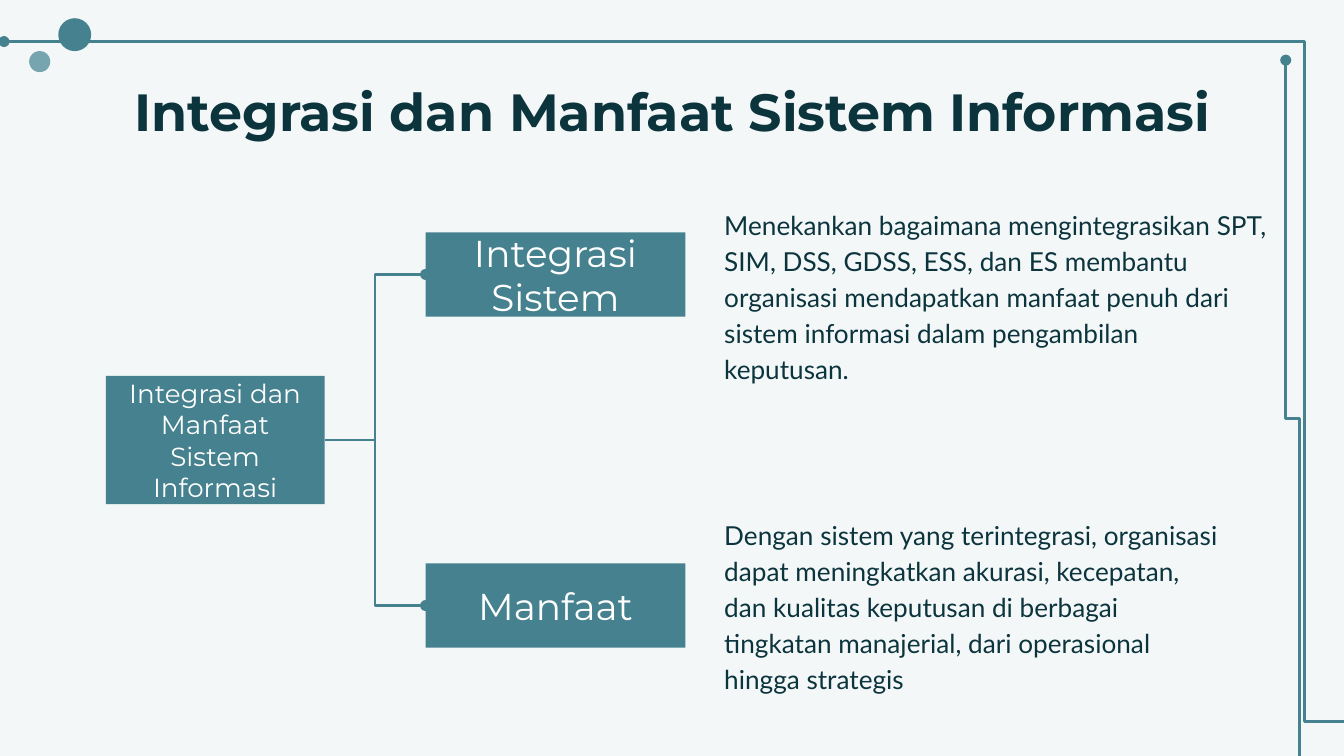
from lxml.etree import SubElement
from pptx import Presentation
from pptx.dml.color import RGBColor
from pptx.enum.shapes import MSO_CONNECTOR, MSO_SHAPE
from pptx.enum.text import MSO_ANCHOR, MSO_AUTO_SIZE, PP_ALIGN
from pptx.oxml.ns import qn
from pptx.util import Inches, Pt

TEAL, PALE_TEAL, INK, WHITE, PAPER = "45818E", "76A5AF", "0C343D", "FFFFFF", "F3F7F8"
TITLE = "Integrasi dan Manfaat Sistem Informasi"

prs = Presentation()
prs.slide_width = Inches(10)
prs.slide_height = prs.slide_width * 9 // 16
CELL = prs.slide_width / 100  # square grid, 100 columns wide
s = prs.slides.add_slide(prs.slide_layouts[5])
s.background.fill.solid()
s.background.fill.fore_color.rgb = RGBColor.from_string(PAPER)


def elbow(x1, y1, x2, y2, bend=50, turn=0):
    """Bent line ending in a dot; bend is a percentage of its run, turn is in degrees."""
    c = s.shapes.add_connector(MSO_CONNECTOR.ELBOW, *(round(v * CELL) for v in (x1, y1, x2, y2)))
    c.line.color.rgb = RGBColor.from_string(TEAL)
    c.line.width = Pt(1.5)
    SubElement(c.line._get_or_add_ln(), qn("a:tailEnd"), type="oval")
    pr = c._element.spPr
    SubElement(pr, qn("a:effectLst"))
    pr.find(qn("a:xfrm")).set("rot", str(turn * 60000))
    guides = pr.find(qn("a:prstGeom")).get_or_add_avLst()
    SubElement(guides, qn("a:gd"), name="adj1", fmla=f"val {round(bend * 1000)}")


def write(sp, text, size, font, color, align, bold=False, anchor=MSO_ANCHOR.MIDDLE):
    tf = sp.text_frame
    tf.text = text
    tf.word_wrap, tf.auto_size, tf.vertical_anchor = True, MSO_AUTO_SIZE.NONE, anchor
    tf.margin_left = tf.margin_right = tf.margin_top = tf.margin_bottom = Inches(0.1)
    p = tf.paragraphs[0]
    p.alignment = align
    p.font.size, p.font.name, p.font.bold = Pt(size), font, bold
    p.font.color.rgb = RGBColor.from_string(color)
    return p


# Frame lines; the second is laid out flat, then turned upright
elbow(100.4, 53.7, 0.3, 3.1, bend=3.3)
elbow(122.85, 30.65, 69.5, 31.65, turn=90)

# Title
title = s.shapes.title
title.left, title.top, title.width, title.height = (round(v * CELL) for v in (7.87, 4.9, 84.26, 6.3))
write(title, TITLE, 28, "Montserrat", INK, PP_ALIGN.CENTER, True, MSO_ANCHOR.TOP)

# Branches: box top, label, description top, description width, description
branches = [
    (17.3, "Integrasi Sistem", 18.8, 42.5,
     "Menekankan bagaimana mengintegrasikan SPT, SIM, DSS, GDSS, ESS, dan ES membantu "
     "organisasi mendapatkan manfaat penuh dari sistem informasi dalam pengambilan keputusan."),
    (41.93, "Manfaat", 41.87, 39.2,
     "Dengan sistem yang terintegrasi, organisasi dapat meningkatkan akurasi, kecepatan, "
     "dan kualitas keputusan di berbagai tingkatan manajerial, dari operasional hingga strategis"),
]
BOX_X, BOX_W, BOX_H = 31.67, 19.33, 6.26
ROOT_X, ROOT_Y, ROOT_W, ROOT_H = 7.87, 27.97, 16.28, 9.55
boxes = [(ROOT_X, ROOT_Y, ROOT_W, ROOT_H, TITLE, 14)]
for top, label, text_top, text_w, text in branches:
    elbow(ROOT_X + ROOT_W, ROOT_Y + ROOT_H / 2, BOX_X, top + BOX_H / 2)
    boxes.append((BOX_X, top, BOX_W, BOX_H, label, 20))
    tb = s.shapes.add_textbox(*(round(v * CELL) for v in (52.9, text_top, text_w, BOX_H)))
    write(tb, text, 14, "Lato", INK, PP_ALIGN.LEFT).line_spacing = 1.15

# Filled shapes: label boxes and corner dots
dots = [(2.17, 3.8, 1.57, PALE_TEAL), (4.34, 1.36, 2.45, TEAL)]
shapes = [(MSO_SHAPE.RECTANGLE, *box, TEAL) for box in boxes]
shapes += [(MSO_SHAPE.OVAL, x, y, d, d, "", 0, color) for x, y, d, color in dots]
for kind, x, y, w, h, label, size, color in shapes:
    sp = s.shapes.add_shape(kind, *(round(v * CELL) for v in (x, y, w, h)))
    sp.shadow.inherit = False
    sp.fill.solid()
    sp.fill.fore_color.rgb = RGBColor.from_string(color)
    sp.line.fill.background()
    if label:
        write(sp, label, size, "Montserrat", WHITE, PP_ALIGN.CENTER)

prs.save("out.pptx")
